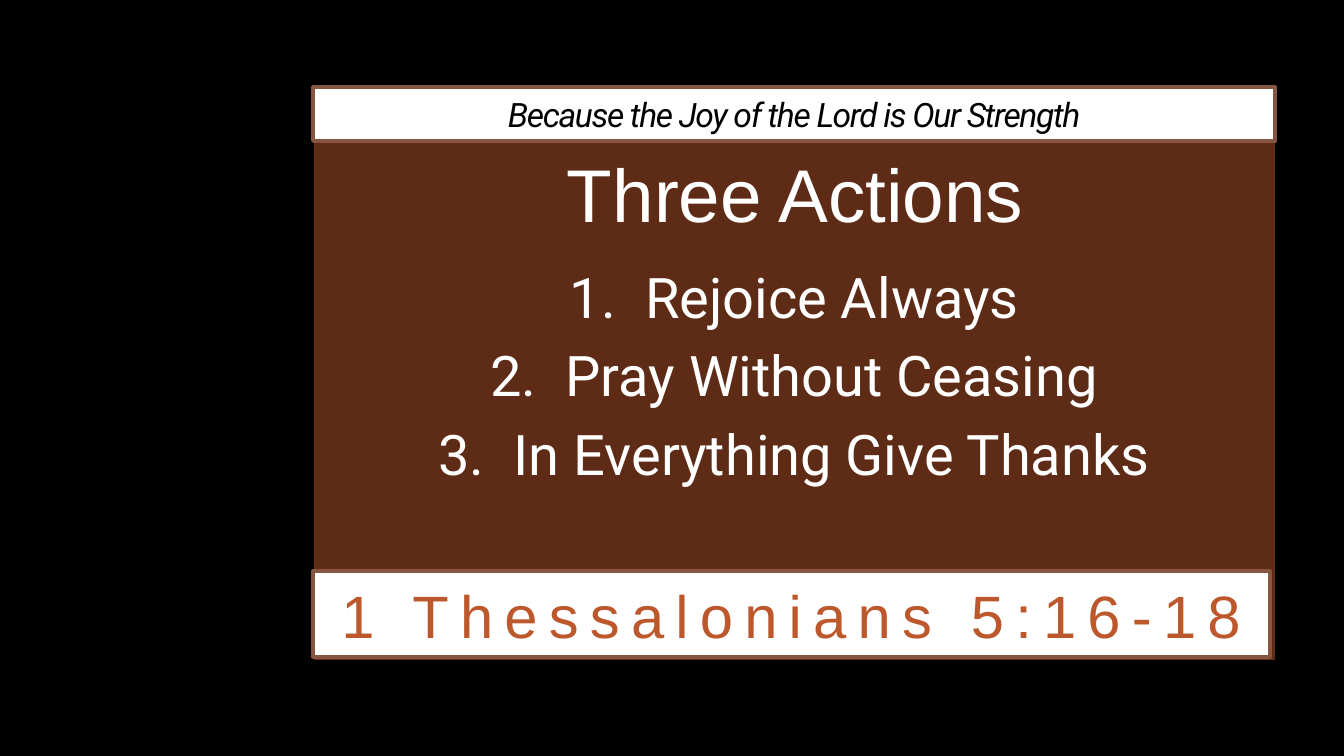
from pptx import Presentation
from pptx.dml.color import RGBColor
from pptx.enum.shapes import MSO_SHAPE
from pptx.enum.text import MSO_ANCHOR, MSO_AUTO_SIZE, PP_ALIGN
from pptx.util import Inches, Pt
from lxml.etree import SubElement
from pptx.oxml.ns import qn


def paint(format, color):
    format.solid()
    format.fore_color.rgb = RGBColor.from_string(color)


def write(para, text, font, size, color, space=0, slant=False):
    para.alignment = PP_ALIGN.CENTER
    run = para.add_run()
    run.text = text
    run.font.name = font
    run.font.size = Pt(size)
    run.font.italic = slant
    paint(run.font.fill, color)
    if space:
        run._r.get_or_add_rPr().set("spc", str(int(space * 100)))


deck = Presentation()
deck.slide_width = Inches(10)
deck.slide_height = Inches(10 * 9 / 16)
slide = deck.slides.add_slide(deck.slide_layouts[1])
paint(slide.background.fill, "000000")

title = slide.shapes.title
body = slide.placeholders[1]
title._element.addprevious(body._element)
for holder, (left, top, width, height) in (
    (body, (2.33, 0.65, 7.16, 4.27)),
    (title, (3.69, 1.05, 4.45, 0.77)),
):
    holder.left, holder.top = Inches(left), Inches(top)
    holder.width, holder.height = Inches(width), Inches(height)
    holder.text_frame.auto_size = MSO_AUTO_SIZE.NONE
    holder.text_frame.vertical_anchor = MSO_ANCHOR.MIDDLE

paint(body.fill, "BD582C")
tint = body._element.spPr.find(".//" + qn("a:srgbClr"))
SubElement(tint, qn("a:alpha")).set("val", "50000")
paint(body.line.fill, "000000")
body.line.width = Pt(0.75)

write(title.text_frame.paragraphs[0], "Three Actions", "Arial", 40, "FFFFFF")

steps = ["Rejoice Always", "Pray Without Ceasing", "In Everything Give Thanks"]
frame = body.text_frame
for index, step in enumerate(steps):
    para = frame.add_paragraph() if index else frame.paragraphs[0]
    para.space_before = Pt(6 if index else 0)
    props = para._p.get_or_add_pPr()
    props.set("marL", str(Inches(0.56)))
    props.set("indent", str(Inches(-0.56)))
    SubElement(props, qn("a:buFontTx"))
    SubElement(props, qn("a:buAutoNum")).set("type", "arabicPeriod")
    write(para, step, "Roboto", 30, "FFFFFF")

bars = [
    (4.25, 7.12, 0.64, "1 Thessalonians 5:16-18", "Arial", 32, "BD582C", 6, False),
    (0.65, 7.16, 0.4, "Because the Joy of the Lord is Our Strength",
     "Roboto", 18, "000000", -0.7, True),
]
for top, width, height, *words in bars:
    bar = slide.shapes.add_shape(
        MSO_SHAPE.RECTANGLE, Inches(2.33), Inches(top), Inches(width), Inches(height)
    )
    bar.shadow.inherit = False
    paint(bar.fill, "FFFFFF")
    paint(bar.line.fill, "865640")
    bar.line.width = Pt(2)
    bar.text_frame.word_wrap = True
    bar.text_frame.vertical_anchor = MSO_ANCHOR.MIDDLE
    write(bar.text_frame.paragraphs[0], *words)

deck.save("out.pptx")
